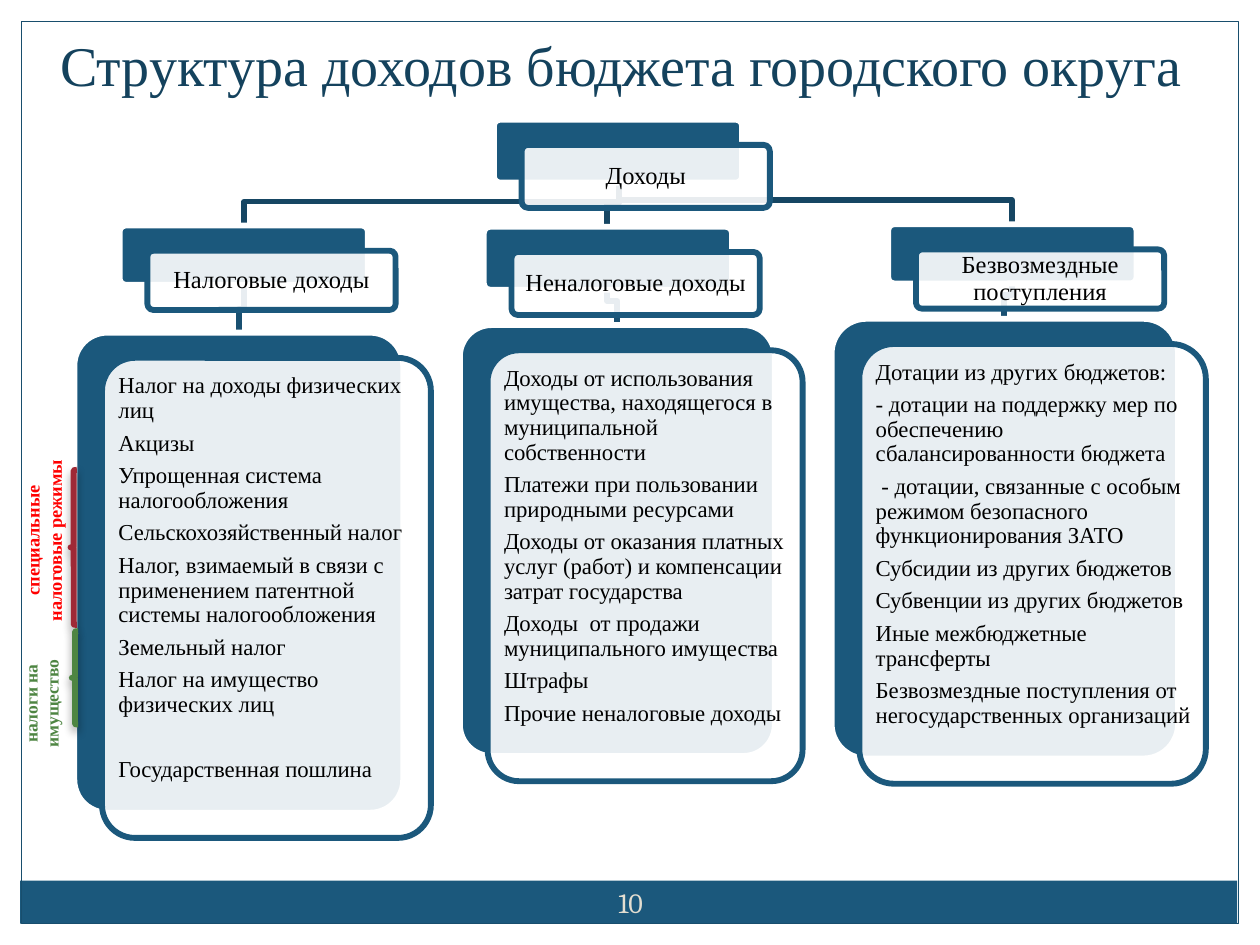
"""Build a slide with the revenue structure of a city district budget."""
from dataclasses import dataclass

from lxml import etree
from pptx import Presentation
from pptx.dml.color import RGBColor
from pptx.enum.shapes import MSO_SHAPE
from pptx.enum.text import MSO_ANCHOR, MSO_AUTO_SIZE, PP_ALIGN
from pptx.oxml.ns import qn
from pptx.util import Inches, Pt

RECTANGLE = MSO_SHAPE.RECTANGLE
ROUNDED = MSO_SHAPE.ROUNDED_RECTANGLE
LEFT_BRACE = MSO_SHAPE.LEFT_BRACE
LEFT, CENTER = PP_ALIGN.LEFT, PP_ALIGN.CENTER
TOP, MIDDLE = MSO_ANCHOR.TOP, MSO_ANCHOR.MIDDLE
NO_AUTO_SIZE = MSO_AUTO_SIZE.NONE


@dataclass(frozen=True)
class Theme:
    """Colours, fonts and sizes of the slide."""
    primary: str = "1B587C"
    frame: str = "184E6D"
    upper_link: str = "164663"
    lower_link: str = "195071"
    title: str = "14425D"
    text: str = "000000"
    white: str = "FFFFFF"
    number: str = "E3DED1"
    special: str = "FF0000"
    special_brace: str = "9F2936"
    property: str = "4E8542"
    font: str = "Times New Roman"
    number_font: str = "Cambria"
    title_size: float = 32
    number_size: float = 16
    head_size: float = 14
    list_size: float = 13
    special_size: float = 10.5
    property_size: float = 10
    line: float = 3.35
    thin_line: float = 0.75


THEME = Theme()


@dataclass(frozen=True)
class Box:
    """A rectangle in inches."""
    left: float
    top: float
    width: float
    height: float

    def lengths(self) -> tuple:
        return tuple(map(Inches, (self.left, self.top, self.width, self.height)))


@dataclass(frozen=True)
class Column:
    """A revenue group: heading card, list card, items and connector positions."""
    heading: str
    head: Box
    body: Box
    head_x: float
    body_x: float
    items: tuple
    last_gap: float = 0


@dataclass(frozen=True)
class Note:
    """A vertical label with its brace."""
    text: str
    box: Box
    brace: Box
    color: str
    brace_color: str
    size: float


ROOT = Box(3.92, 0.95, 1.97, 0.5)
ROOT_X = 4.91
COLUMNS = (
    Column("Налоговые доходы", Box(0.95, 1.79, 1.97, 0.47), Box(0.59, 2.64, 2.61, 3.81), 1.94, 1.9, (
        "Налог на доходы физических лиц",
        "Акцизы",
        "Упрощенная система налогообложения",
        "Сельскохозяйственный налог",
        "Налог, взимаемый в связи с применением патентной системы налогообложения",
        "Земельный налог",
        "Налог на имущество физических лиц",
        "Государственная пошлина"), last_gap=18.5),
    Column("Неналоговые доходы", Box(3.84, 1.8, 1.97, 0.5), Box(3.65, 2.58, 2.5, 3.42), 4.82, 4.9, (
        "Доходы от использования имущества, находящегося в муниципальной собственности",
        "Платежи при пользовании природными ресурсами",
        "Доходы от оказания платных услуг (работ) и компенсации затрат государства",
        "Доходы  от продажи муниципального имущества",
        "Штрафы",
        "Прочие неналоговые доходы")),
    Column("Безвозмездные поступления", Box(7.05, 1.78, 1.97, 0.47), Box(6.6, 2.53, 2.75, 3.49), 8.03, 7.97, (
        "Дотации из других бюджетов:",
        "- дотации на поддержку мер по обеспечению сбалансированности бюджета",
        " - дотации, связанные с особым режимом безопасного функционирования ЗАТО",
        "Субсидии из других бюджетов",
        "Субвенции из других бюджетов",
        "Иные межбюджетные трансферты",
        "Безвозмездные поступления от негосударственных организаций")),
)
NOTES = (
    Note("специальные налоговые режимы", Box(0.12, 3.54, 0.56, 1.5), Box(0.56, 3.73, 0.05, 1.23),
         THEME.special, THEME.special_brace, THEME.special_size),
    Note("налоги на имущество", Box(0.11, 5.11, 0.54, 0.95), Box(0.57, 5.01, 0.05, 0.74),
         THEME.property, THEME.property, THEME.property_size),
)


def place(shape, box: Box) -> None:
    """Move and size a shape."""
    shape.left, shape.top, shape.width, shape.height = box.lengths()


def add_outline(slide, kind, box: Box, fill: str | None, line: str | None, weight: float = THEME.line):
    """Add a preset shape without a shadow."""
    shape = slide.shapes.add_shape(kind, *box.lengths())
    shape.shadow.inherit = False
    if fill:
        shape.fill.solid()
        shape.fill.fore_color.rgb = RGBColor.from_string(fill)
    else:
        shape.fill.background()
    if line:
        shape.line.color.rgb = RGBColor.from_string(line)
        shape.line.width = Pt(weight)
    else:
        shape.line.fill.background()
    return shape


def set_frame(frame, inset: float, anchor) -> None:
    """Set wrapping, insets and anchor of a text frame."""
    frame.word_wrap = True
    frame.auto_size = NO_AUTO_SIZE
    frame.vertical_anchor = anchor
    frame.margin_left = frame.margin_right = frame.margin_top = frame.margin_bottom = Inches(inset)


def style(paragraph, size: float, color: str, align=CENTER, bold: bool = False, name: str = THEME.font) -> None:
    """Format a paragraph."""
    paragraph.alignment = align
    paragraph.font.name = name
    paragraph.font.size = Pt(size)
    paragraph.font.bold = bold
    paragraph.font.color.rgb = RGBColor.from_string(color)


def add_label(slide, text: str, box: Box, inset: float = 0.05):
    """Add a text box and return its frame."""
    frame = slide.shapes.add_textbox(*box.lengths()).text_frame
    set_frame(frame, inset, MIDDLE)
    frame.text = text
    return frame


def add_card(slide, box: Box):
    """Add a solid card with a translucent one in front, and return the front."""
    add_outline(slide, ROUNDED, box, THEME.primary, THEME.white).adjustments[0] = 0.1
    front_box = Box(box.left + 0.22, box.top + 0.2, box.width, box.height)
    front = add_outline(slide, ROUNDED, front_box, THEME.white, THEME.primary)
    front.adjustments[0] = 0.1
    color = front.element.spPr.find(qn("a:solidFill")).find(qn("a:srgbClr"))
    etree.SubElement(color, qn("a:alpha"), val="90000")
    return front


def add_heading(slide, box: Box, text: str) -> None:
    """Add a card with a centred heading."""
    frame = add_card(slide, box).text_frame
    set_frame(frame, 0.06, MIDDLE)
    frame.text = text
    frame.paragraphs[0].line_spacing = 0.9
    style(frame.paragraphs[0], THEME.head_size, THEME.text)


def add_list(slide, placeholder, column: Column) -> None:
    """Add a list card and fill the body placeholder in front of it."""
    body = column.body
    add_card(slide, body)
    slide.shapes.element.append(placeholder.element)
    place(placeholder, Box(body.left + 0.3, body.top + 0.28, body.width - 0.15, body.height - 0.15))
    frame = placeholder.text_frame
    set_frame(frame, 0.05, TOP)
    frame.text = "\n".join(column.items)
    for paragraph in frame.paragraphs:
        paragraph.line_spacing = 0.9
        paragraph.space_before = Pt(0)
        paragraph.space_after = Pt(0.35 * THEME.list_size)
        properties = paragraph._p.get_or_add_pPr()
        properties.set("marL", "0")
        properties.set("indent", "0")
        etree.SubElement(properties, qn("a:buNone"))
        style(paragraph, THEME.list_size, THEME.text, LEFT)
    frame.paragraphs[-1].space_before = Pt(column.last_gap)


def add_elbow(slide, start: tuple, end: tuple, color: str) -> None:
    """Add a line that goes down, across and down."""
    bend = end[1] - 0.19
    builder = slide.shapes.build_freeform(Inches(start[0]), Inches(start[1]))
    points = ((start[0], bend), (end[0], bend), end)
    builder.add_line_segments([tuple(map(Inches, point)) for point in points], close=False)
    shape = builder.convert_to_shape()
    shape.shadow.inherit = False
    shape.fill.background()
    shape.line.color.rgb = RGBColor.from_string(color)
    shape.line.width = Pt(THEME.line)


def add_note(slide, note: Note) -> None:
    """Add a shadowed brace and its vertical label."""
    brace = add_outline(slide, LEFT_BRACE, note.brace, None, note.brace_color)
    effects = brace.element.spPr.find(qn("a:effectLst"))
    shadow = etree.SubElement(effects, qn("a:outerShdw"), blurRad=str(Pt(5.2)), dist=str(Pt(3)),
                              dir="5400000", rotWithShape="0")
    color = etree.SubElement(shadow, qn("a:srgbClr"), val=THEME.text)
    etree.SubElement(color, qn("a:alpha"), val="40000")
    frame = add_label(slide, note.text, note.box)
    frame.vertical_anchor = TOP
    frame._txBody.bodyPr.set("vert", "vert270")
    style(frame.paragraphs[0], note.size, note.color, bold=True)


def main() -> None:
    """Build and save the presentation."""
    presentation = Presentation()
    presentation.slide_width, presentation.slide_height = Inches(10), Inches(7.5)
    slide = presentation.slides.add_slide(presentation.slide_layouts.get_by_name("Comparison"))
    title, *bodies, spare = slide.placeholders
    slide.shapes.element.remove(spare.element)

    add_outline(slide, RECTANGLE, Box(0.16, 6.99, 9.66, 0.34), THEME.primary, None)
    add_outline(slide, RECTANGLE, Box(0.17, 0.17, 9.66, 7.16), None, THEME.frame, THEME.thin_line)
    number = add_label(slide, "10", Box(4.67, 6.92, 0.67, 0.48))
    style(number.paragraphs[0], THEME.number_size, THEME.number, name=THEME.number_font)

    place(title, Box(0.15, 0.19, 9.56, 0.64))
    set_frame(title.text_frame, 0.05, MIDDLE)
    title.text_frame.text = "Структура доходов бюджета городского округа"
    style(title.text_frame.paragraphs[0], THEME.title_size, THEME.title)

    for column in COLUMNS:
        head_bottom = column.head.top + column.head.height
        add_elbow(slide, (column.head_x, head_bottom), (column.body_x, column.body.top), THEME.lower_link)
        add_elbow(slide, (ROOT_X, ROOT.top + ROOT.height), (column.head_x, column.head.top), THEME.upper_link)
    add_heading(slide, ROOT, "Доходы")
    for column, placeholder in zip(COLUMNS, bodies):
        add_heading(slide, column.head, column.heading)
        add_list(slide, placeholder, column)
    for note in NOTES:
        add_note(slide, note)
    presentation.save("out.pptx")


if __name__ == "__main__":
    main()
